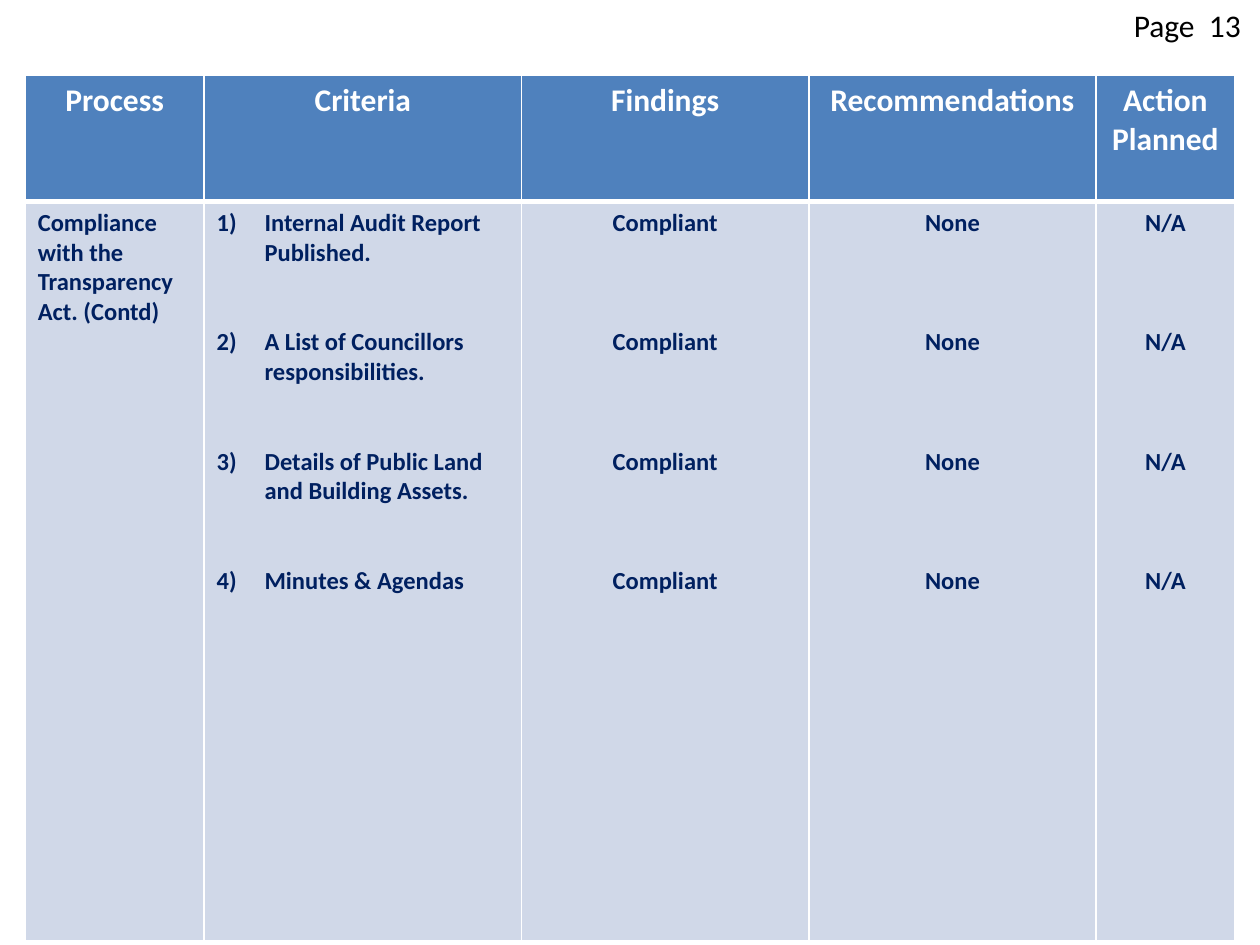
from lxml.etree import SubElement
from pptx import Presentation
from pptx.dml.color import RGBColor
from pptx.enum.text import PP_ALIGN
from pptx.oxml.ns import qn
from pptx.util import Inches, Pt

PAGE_LABEL = "Page  13"
HEADINGS = ["Process", "Criteria", "Findings", "Recommendations", "Action Planned"]
PROCESS = "Compliance with the Transparency Act. (Contd)"
CHECKS = [
    ("Internal Audit Report Published.", "Compliant", "None", "N/A"),
    ("A List of Councillors responsibilities.", "Compliant", "None", "N/A"),
    ("Details of Public Land and Building Assets.", "Compliant", "None", "N/A"),
    ("Minutes & Agendas", "Compliant", "None", "N/A"),
]
COLUMN_WIDTHS = [1.42, 2.52, 2.28, 2.28, 1.1]
ROW_HEIGHTS = [1.0, 5.87]
LINE_PITCH = 17.09  # one line of 14 pt Calibri, in points
LINES_PER_CHECK = 4
NUMBER_INDENT = 0.38

HEADER_STYLE = {"size": Pt(18), "bold": True, "name": "Calibri"}
BODY_STYLE = {"size": Pt(14), "bold": True, "name": "Calibri"}
PAGE_STYLE = {"size": Pt(18), "bold": False, "name": "Calibri"}
HEADER_BORDERS = {"lnL": 1, "lnR": 1, "lnT": 1, "lnB": 3}
BODY_BORDERS = {"lnL": 1, "lnR": 1, "lnT": 3, "lnB": 1}


def color(hex_value):
    return RGBColor.from_string(hex_value)


def write(frame, texts, style, text_color, align=PP_ALIGN.LEFT, gap_lines=0):
    """Fill the frame with paragraphs, gap_lines blank lines apart."""
    for index, text in enumerate(texts):
        paragraph = frame.paragraphs[0] if index == 0 else frame.add_paragraph()
        paragraph.alignment = align
        if index:
            paragraph.space_before = Pt(gap_lines * LINE_PITCH)
        run = paragraph.add_run()
        run.text = text
        for key, value in style.items():
            setattr(run.font, key, value)
        run.font.color.rgb = color(text_color)


def number(paragraph):
    properties = paragraph._p.get_or_add_pPr()
    properties.set("marL", str(Inches(NUMBER_INDENT)))
    properties.set("indent", str(-Inches(NUMBER_INDENT)))
    SubElement(properties, qn("a:buFont"), typeface="+mj-lt")
    SubElement(properties, qn("a:buAutoNum"), type="arabicParenR")


def dress(cell, fill, borders):
    """Give the cell white borders, which must precede its fill in the XML."""
    properties = cell._tc.get_or_add_tcPr()
    for side, points in borders.items():
        line = SubElement(properties, qn(f"a:{side}"), w=str(Pt(points)))
        solid = SubElement(line, qn("a:solidFill"))
        SubElement(solid, qn("a:srgbClr"), val="FFFFFF")
    cell.fill.solid()
    cell.fill.fore_color.rgb = color(fill)


def add_audit_table(slide):
    table = slide.shapes.add_table(
        len(ROW_HEIGHTS), len(HEADINGS), Inches(0.2), Inches(0.6),
        Inches(sum(COLUMN_WIDTHS)), Inches(sum(ROW_HEIGHTS))).table
    for column, width in zip(table.columns, COLUMN_WIDTHS):
        column.width = Inches(width)
    for row, height in zip(table.rows, ROW_HEIGHTS):
        row.height = Inches(height)

    body = [(PROCESS,), *zip(*CHECKS)]
    for index, (heading, entries) in enumerate(zip(HEADINGS, body)):
        header_cell, body_cell = table.cell(0, index), table.cell(1, index)
        dress(header_cell, "4F81BD", HEADER_BORDERS)
        write(header_cell.text_frame, [heading], HEADER_STYLE, "FFFFFF", PP_ALIGN.CENTER)

        is_criteria = heading == "Criteria"
        text_lines = 2 if is_criteria else 1
        align = PP_ALIGN.LEFT if index < 2 else PP_ALIGN.CENTER
        dress(body_cell, "D0D8E8", BODY_BORDERS)
        write(body_cell.text_frame, entries, BODY_STYLE, "002060", align,
              LINES_PER_CHECK - text_lines)
        if is_criteria:
            for paragraph in body_cell.text_frame.paragraphs:
                number(paragraph)


def main():
    presentation = Presentation()
    presentation.slide_width = Inches(10)
    presentation.slide_height = Inches(7.5)
    slide = presentation.slides.add_slide(presentation.slide_layouts[6])
    add_audit_table(slide)
    page = slide.shapes.add_textbox(Inches(8.9), 0, Inches(1.1), Inches(0.4))
    page.text_frame.word_wrap = True
    write(page.text_frame, [PAGE_LABEL], PAGE_STYLE, "000000")
    presentation.save("out.pptx")


if __name__ == "__main__":
    main()
